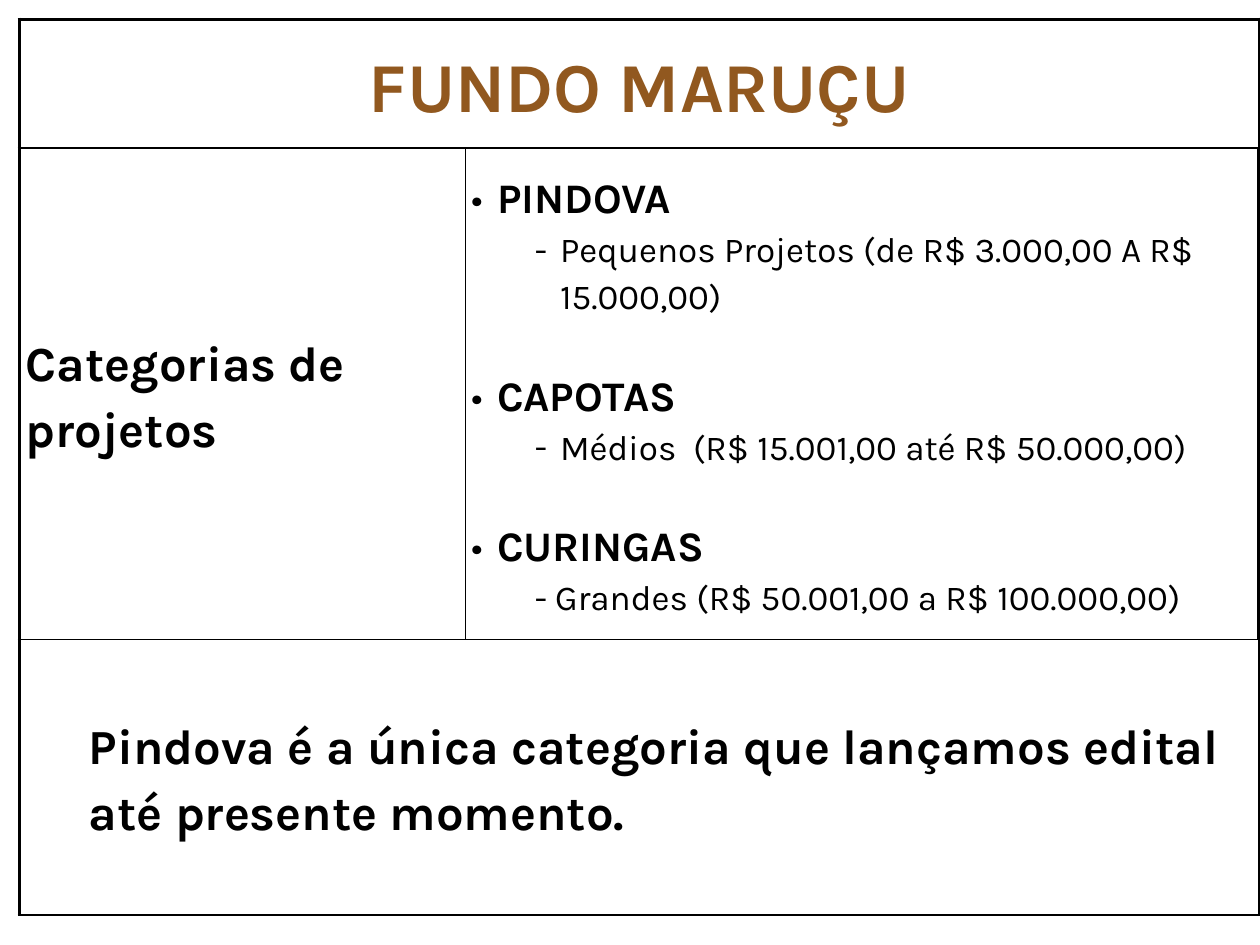
from lxml import etree
from pptx import Presentation
from pptx import util as u
from pptx.dml.color import RGBColor
from pptx.enum import text
from pptx.oxml import ns

COLORS = {"title": "91581F", "ink": "000000"}
THIN, THICK = 1, 2.25
CATEGORIES = [
    ("PINDOVA", "Pequenos Projetos (de R$ 3.000,00 A R$ 15.000,00)", "-"),
    ("CAPOTAS", "Médios  (R$ 15.001,00 até R$ 50.000,00)", "-"),
    ("CURINGAS", "- Grandes (R$ 50.001,00 a R$ 100.000,00)", None),
]


class SlideWriter:
    font = "Karla"
    line_spacing = 1.15

    def __init__(self, slide):
        self.slide = slide

    def table(self, left, top, columns, rows):
        """Add an unstyled table; columns and rows are lists of sizes in cm."""
        frame = self.slide.shapes.add_table(
            len(rows), len(columns), u.Cm(left), u.Cm(top),
            u.Cm(sum(columns)), u.Cm(sum(rows)))
        grid = frame.table
        grid.first_row = grid.horz_banding = False
        for column, width in zip(grid.columns, columns):
            column.width = u.Cm(width)
        for row, height in zip(grid.rows, rows):
            row.height = u.Cm(height)
        for cell in grid.iter_cells():
            cell.margin_left = cell.margin_right = u.Cm(0.13)
            cell.margin_top = cell.margin_bottom = 0
            cell.vertical_anchor = text.MSO_ANCHOR.MIDDLE
        return grid

    def borders(self, grid):
        """Draw thin inner and bottom lines, thick left, top and right edges."""
        last_column = len(grid.columns) - 1
        for r, row in enumerate(grid.rows):
            for c, cell in enumerate(row.cells):
                widths = {
                    "L": THICK if c == 0 else THIN,
                    "R": THICK if c == last_column else THIN,
                    "T": THICK if r == 0 else THIN,
                    "B": THIN,
                }
                properties = cell._tc.get_or_add_tcPr()
                for side, width in widths.items():
                    line = etree.SubElement(
                        properties, ns.qn(f"a:ln{side}"), w=str(u.Pt(width)))
                    fill = etree.SubElement(line, ns.qn("a:solidFill"))
                    etree.SubElement(fill, ns.qn("a:srgbClr"), val=COLORS["ink"])
                cell.fill.background()

    def paragraph(self, cell, words, size, bold=True, color="ink", level=0,
                  margin=0, indent=0, bullet=None, before=0, align=None):
        """Write into the cell, after any text there; margin and indent in cm."""
        frame = cell.text_frame
        paragraph = frame.add_paragraph() if frame.text else frame.paragraphs[0]
        paragraph.text = words
        paragraph.level = level
        paragraph.line_spacing = self.line_spacing
        paragraph.space_before = u.Pt(before)
        paragraph.alignment = align
        properties = paragraph._p.get_or_add_pPr()
        properties.set("marL", str(u.Cm(margin)))
        properties.set("indent", str(u.Cm(indent)))
        if bullet:
            etree.SubElement(properties, ns.qn("a:buFont"), typeface=self.font)
            etree.SubElement(properties, ns.qn("a:buChar"), char=bullet)
        else:
            etree.SubElement(properties, ns.qn("a:buNone"))
        font = paragraph.font
        font.name, font.size, font.bold = self.font, u.Pt(size), bold
        font.color.rgb = RGBColor.from_string(COLORS[color])


def main():
    deck = Presentation()
    deck.slide_width, deck.slide_height = u.Cm(25.4), u.Cm(19.05)
    writer = SlideWriter(deck.slides.add_slide(deck.slide_layouts[6]))

    fund = writer.table(0.39, 0.39, columns=[8.99, 16], rows=[2.59, 9.91, 5.56])
    title, label, categories, notice = (
        fund.cell(0, 0), fund.cell(1, 0), fund.cell(1, 1), fund.cell(2, 0))
    title.merge(fund.cell(0, 1))
    notice.merge(fund.cell(2, 1))
    writer.borders(fund)

    writer.paragraph(title, "FUNDO MARUÇU", 40, color="title", margin=0.25,
                     indent=-0.25, align=text.PP_ALIGN.CENTER)
    writer.paragraph(label, "Categorias de projetos", 28)
    for position, (name, amount, dash) in enumerate(CATEGORIES):
        writer.paragraph(categories, name, 24, margin=0.51, indent=-0.51,
                         bullet="•", before=27 if position else 0)
        writer.paragraph(categories, amount, 20, bold=False, level=1,
                         margin=1.78, indent=-0.51, bullet=dash)
    writer.paragraph(
        notice, "Pindova é a única categoria que lançamos edital até presente momento.",
        28, level=1, margin=1.27)

    deck.save("out.pptx")


if __name__ == "__main__":
    main()
